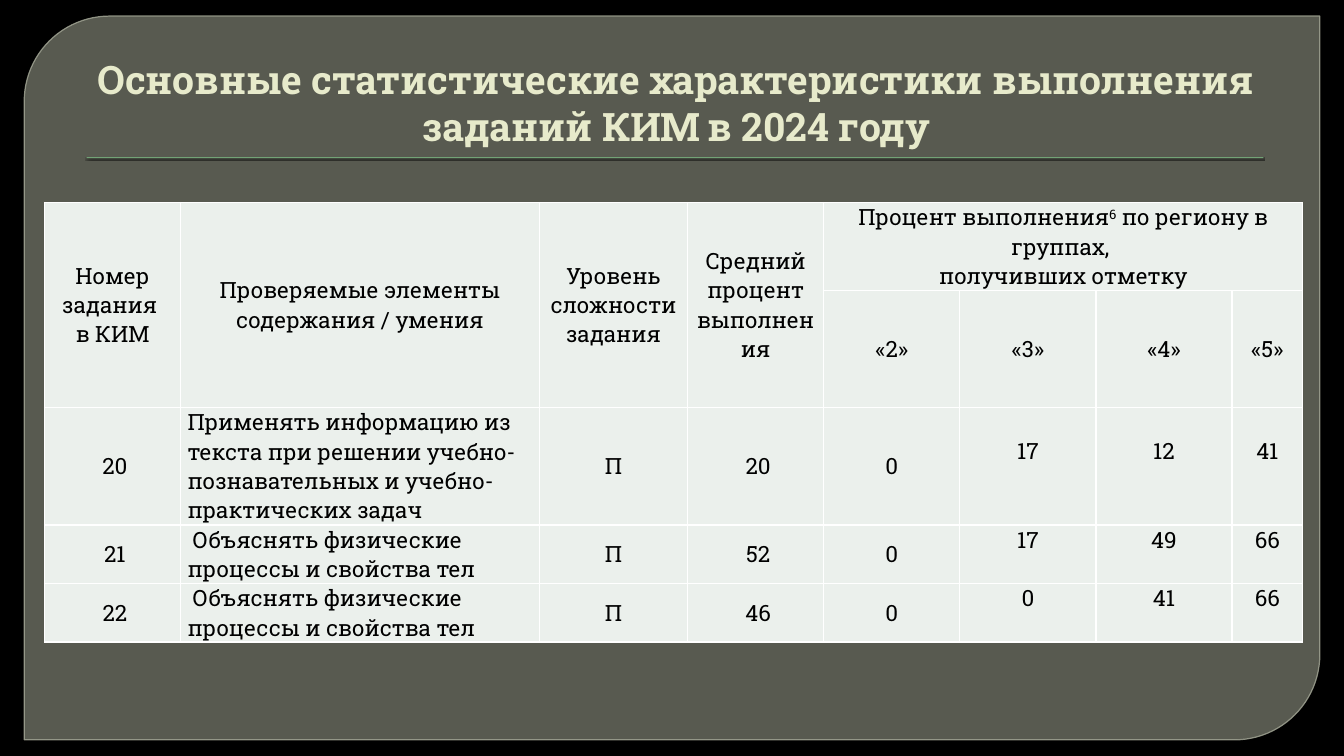
from lxml import etree
from pptx import Presentation
from pptx.dml.color import RGBColor
from pptx.enum.shapes import MSO_SHAPE
from pptx.enum.text import MSO_ANCHOR, PP_ALIGN
from pptx.oxml.ns import qn
from pptx.util import Inches, Pt

CENTER, LEFT = PP_ALIGN.CENTER, PP_ALIGN.LEFT
TOP, MIDDLE, BOTTOM = MSO_ANCHOR.TOP, MSO_ANCHOR.MIDDLE, MSO_ANCHOR.BOTTOM
PANEL, RECT = MSO_SHAPE.ROUND_2_DIAG_RECTANGLE, MSO_SHAPE.RECTANGLE


def rgb(value):
    return RGBColor.from_string(value)


def add_color(parent, value, alpha=100):
    color = etree.SubElement(parent, qn("a:srgbClr"), val=value)
    if alpha < 100:
        etree.SubElement(color, qn("a:alpha"), val=str(alpha * 1000))


def set_alpha(fill, alpha):
    color = fill.find(".//" + qn("a:srgbClr"))
    etree.SubElement(color, qn("a:alpha"), val=str(alpha * 1000))


class Deck:
    font = "Roboto Slab"
    title_color, text_color = "E7EACB", "000000"
    cell_color, border_color = "EBF0EC", "FFFFFF"

    def __init__(self, background):
        self.prs = Presentation()
        self.prs.slide_width, self.prs.slide_height = Inches(13.33), Inches(7.5)
        self.s = self.prs.slides.add_slide(self.prs.slide_layouts[6])
        self.s.background.fill.solid()
        self.s.background.fill.fore_color.rgb = rgb(background)

    def shape(self, kind, box, fill):
        sp = self.s.shapes.add_shape(kind, *map(Inches, box))
        sp.shadow.inherit = False
        sp.fill.solid()
        sp.fill.fore_color.rgb = rgb(fill)
        sp.line.fill.background()
        return sp

    def panel(self, box):
        sp = self.shape(PANEL, box, "888B7B")
        sp.adjustments[0], sp.adjustments[1] = 0.118, 0
        set_alpha(sp._element.spPr.find(qn("a:solidFill")), 65)
        sp.line.color.rgb = rgb("9DA090")
        sp.line.width = Pt(0.87)
        set_alpha(sp._element.spPr.find(qn("a:ln")), 88)

    def rule(self, box):
        sp = self.shape(RECT, box, "72A376")
        effects = sp._element.spPr.find(qn("a:effectLst"))
        shadow = etree.SubElement(effects, qn("a:outerShdw"), blurRad=str(Pt(1)),
                                  dist=str(Pt(1)), dir="5400000")
        add_color(shadow, "000000", 75)

    def style(self, p, size, color, align=CENTER, bold=False, margin=0, indent=0):
        p.alignment = align
        pPr = p._p.get_or_add_pPr()
        pPr.set("marL", str(Inches(margin)))
        pPr.set("indent", str(Inches(indent)))
        f = p.font
        f.name, f.size, f.bold = self.font, Pt(size), bold
        f.color.rgb = rgb(color)

    def title(self, box, text):
        tf = self.s.shapes.add_textbox(*map(Inches, box)).text_frame
        tf.word_wrap = True
        tf.vertical_anchor = BOTTOM
        p = tf.paragraphs[0]
        p.text = text
        self.style(p, 28, self.title_color, bold=True, margin=0.06)

    def table(self, left, top, widths, heights):
        frame = self.s.shapes.add_table(
            len(heights), len(widths), Inches(left), Inches(top),
            Inches(sum(widths)), Inches(sum(heights)))
        table = frame.table
        table.first_row = table.horz_banding = False
        for column, width in zip(table.columns, widths):
            column.width = Inches(width)
        for row, height in zip(table.rows, heights):
            row.height = Inches(height)
        for cell in table.iter_cells():
            cell.margin_left = cell.margin_right = Inches(0.07)
            cell.margin_top = cell.margin_bottom = 0
            cell.fill.solid()
            cell.fill.fore_color.rgb = rgb(self.cell_color)
            self.borders(cell)
        return table

    def borders(self, cell):
        tcPr = cell._tc.get_or_add_tcPr()
        for i, side in enumerate(("a:lnL", "a:lnR", "a:lnT", "a:lnB")):
            line = etree.Element(qn(side), w=str(Pt(1)))
            add_color(etree.SubElement(line, qn("a:solidFill")), self.border_color)
            tcPr.insert(i, line)

    def cell(self, cell, text, align=CENTER, indent=0, anchor=MIDDLE, top=0):
        cell.vertical_anchor = anchor
        cell.margin_top = Inches(top)
        cell.text_frame.text = text
        for p in cell.text_frame.paragraphs:
            self.style(p, 16, self.text_color, align, indent=indent)


deck = Deck("000000")

# Panel, title and rule
deck.panel((0.24, 0.16, 12.85, 7.18))
deck.rule((0.86, 1.56, 11.67, 0.01))
deck.title((0.67, 0.28, 12, 1.25),
           "Основные статистические характеристики выполнения заданий КИМ в 2024 году")

# Table header: four tall cells, then a group over the four marks
table = deck.table(0.44, 2.01, [1.35, 3.56, 1.47, 1.35, 1.35, 1.35, 1.35, 0.7],
                   [0.87, 1.16, 1.17, 0.58, 0.58])
headers = ["Номер\nзадания \vв КИМ", "Проверяемые элементы содержания / умения",
           "Уровень сложности задания", "Средний процент выполнения"]
for col, header in enumerate(headers):
    table.cell(0, col).merge(table.cell(1, col))
    deck.cell(table.cell(0, col), header)

group = table.cell(0, 4)
group.merge(table.cell(0, 7))
deck.cell(group, "Процент выполнения")
p = group.text_frame.paragraphs[0]
r = p.add_run()
r.text = "6"
r._r.get_or_add_rPr().set("baseline", "30000")
p.add_run().text = " по региону в группах, "
p.add_line_break()
p.add_run().text = "получивших отметку"
for col, mark in enumerate(("«2»", "«3»", "«4»", "«5»"), 4):
    deck.cell(table.cell(1, col), mark)

# Table body: the last three columns hang from the top
PROCESSES = "Объяснять физические процессы и свойства тел"
tasks = [
    (20, "Применять информацию из текста при решении учебно-познавательных "
         "и учебно-практических задач", "П", 20, 0, 17, 12, 41),
    (21, PROCESSES, "П", 52, 0, 17, 49, 66),
    (22, PROCESSES, "П", 46, 0, 0, 41, 66),
]
indents = [0.05, 0.05, -0.08, 0.05, 0, 0, 0, 0]
for row, task in enumerate(tasks, 2):
    first = row == 2
    for col, value in enumerate(task):
        hanging = col > 4
        deck.cell(table.cell(row, col), str(value),
                  align=LEFT if col == 1 else CENTER,
                  indent=0 if first and col == 1 else indents[col],
                  anchor=TOP if hanging else MIDDLE,
                  top=0.29 if first and hanging else 0)

deck.prs.save("out.pptx")
